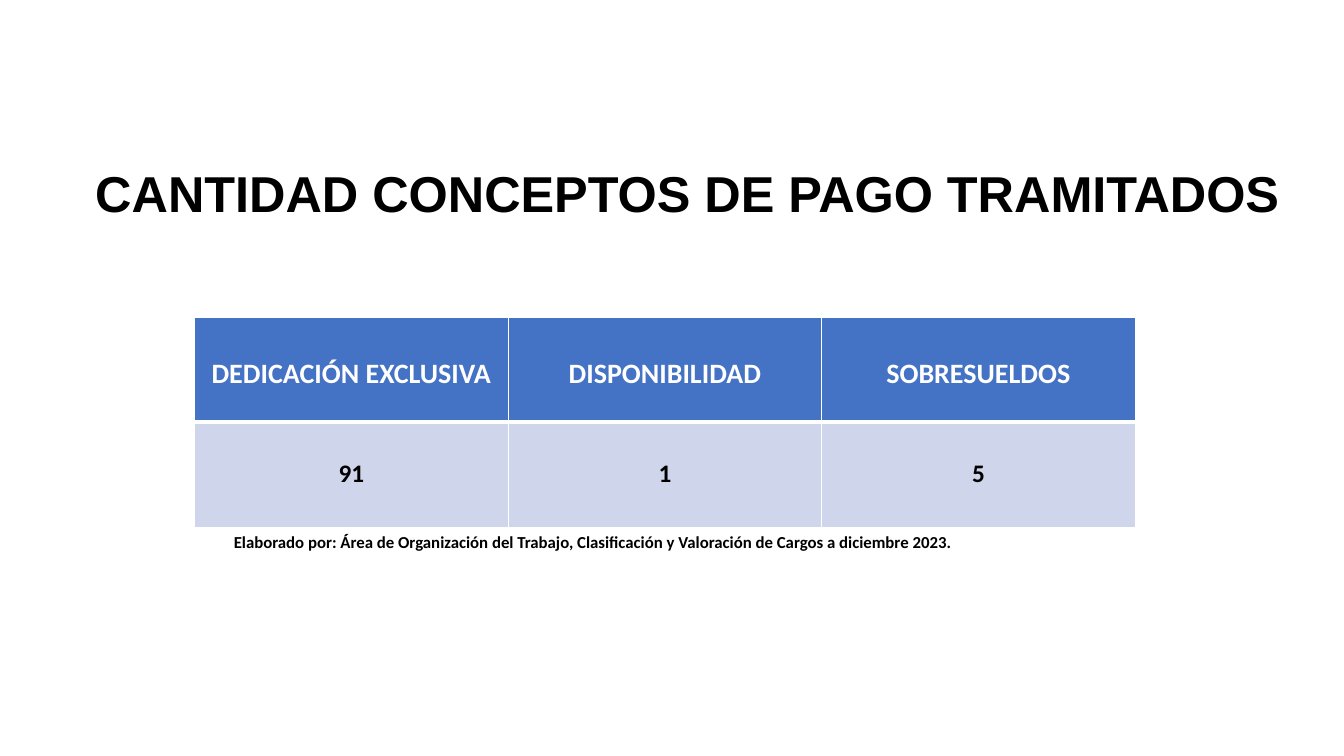
from dataclasses import dataclass

from lxml.etree import SubElement
from pptx import Presentation
from pptx.dml.color import RGBColor
from pptx.enum.text import MSO_ANCHOR, PP_ALIGN
from pptx.oxml.ns import qn
from pptx.util import Inches, Pt


@dataclass(frozen=True)
class Theme:
    title_font: str = "Arial"
    body_font: str = "Calibri"
    black: str = "000000"
    white: str = "FFFFFF"
    header_fill: str = "4472C4"
    value_fill: str = "CFD5EA"
    title_size: int = 36
    header_size: int = 20
    value_size: int = 18
    source_size: int = 12
    thin_border: int = 1
    thick_border: int = 3


THEME = Theme()
PAYMENTS = {"DEDICACIÓN EXCLUSIVA": "91", "DISPONIBILIDAD": "1", "SOBRESUELDOS": "5"}


def add_bold_run(paragraph, wording, font, size, color):
    run = paragraph.add_run()
    run.text = wording
    run.font.name = font
    run.font.size = Pt(size)
    run.font.bold = True
    run.font.color.rgb = RGBColor.from_string(color)


def add_label(slide, place, wording, font, size, align=PP_ALIGN.LEFT, anchor=MSO_ANCHOR.TOP):
    frame = slide.shapes.add_textbox(*map(Inches, place)).text_frame
    frame.word_wrap = True
    frame.vertical_anchor = anchor
    paragraph = frame.paragraphs[0]
    paragraph.alignment = align
    add_bold_run(paragraph, wording, font, size, THEME.black)


def set_borders(cell, widths):
    """Draw white cell borders; widths maps each side (L, R, T, B) to points."""
    properties = cell._tc.get_or_add_tcPr()
    for position, (side, width) in enumerate(widths.items()):
        border = SubElement(properties, qn(f"a:ln{side}"), w=str(Pt(width)))
        fill = SubElement(border, qn("a:solidFill"))
        SubElement(fill, qn("a:srgbClr"), val=THEME.white)
        properties.insert(position, border)


def fill_cell(cell, wording, size, color, background):
    cell.fill.solid()
    cell.fill.fore_color.rgb = RGBColor.from_string(background)
    # The wording sits one line below the usual top margin.
    cell.margin_top = Inches(0.05) + Pt(1.22 * size)
    paragraph = cell.text_frame.paragraphs[0]
    paragraph.alignment = PP_ALIGN.CENTER
    add_bold_run(paragraph, wording, THEME.body_font, size, color)


def add_payment_table(slide, left, top, width, height):
    table = slide.shapes.add_table(
        2, len(PAYMENTS), Inches(left), Inches(top), Inches(width), Inches(height)
    ).table
    thin, thick = THEME.thin_border, THEME.thick_border
    for column, (concept, amount) in enumerate(PAYMENTS.items()):
        header, value = table.cell(0, column), table.cell(1, column)
        fill_cell(header, concept, THEME.header_size, THEME.white, THEME.header_fill)
        set_borders(header, {"L": thin, "R": thin, "T": thin, "B": thick})
        fill_cell(value, amount, THEME.value_size, THEME.black, THEME.value_fill)
        set_borders(value, {"L": thin, "R": thin, "T": thick, "B": thin})


def main():
    presentation = Presentation()
    presentation.slide_width = Inches(13.33)
    presentation.slide_height = Inches(7.5)
    slide = presentation.slides.add_slide(presentation.slide_layouts[6])

    add_label(slide, (0.75, 1.28, 12.14, 1.25), "CANTIDAD CONCEPTOS DE PAGO TRAMITADOS",
              THEME.title_font, THEME.title_size, PP_ALIGN.CENTER, MSO_ANCHOR.MIDDLE)
    add_payment_table(slide, 1.93, 3.15, 9.33, 2.08)
    add_label(slide, (2.22, 5.23, 7.78, 0.3),
              "Elaborado por: Área de Organización del Trabajo, "
              "Clasificación y Valoración de Cargos a diciembre 2023.",
              THEME.body_font, THEME.source_size)

    presentation.save("out.pptx")


if __name__ == "__main__":
    main()
